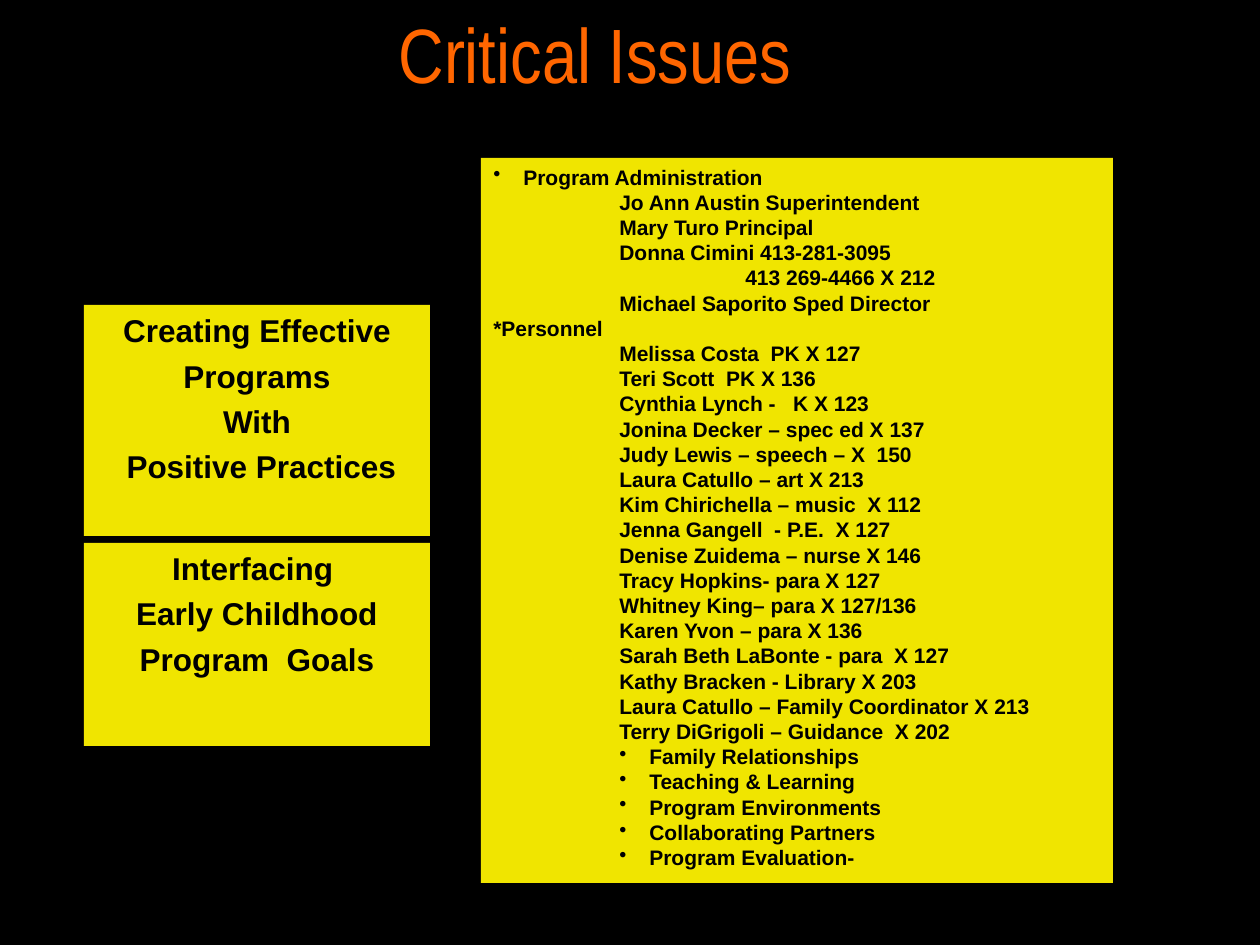
from dataclasses import dataclass

import pptx
import pptx.dml.color
import pptx.enum.shapes
import pptx.enum.text
import pptx.oxml
import pptx.oxml.ns
import pptx.util

EMU_PER_PX = 914400 / 126
INCH = 126
BULLET_GAP = 30
COLORS = {"background": "000000", "title": "FF6600", "panel": "F0E500", "text": "000000"}
ALIGN = pptx.enum.text.PP_ALIGN


@dataclass(frozen=True)
class Line:
    text: str
    indent: int = 0
    bullet: bool = False


@dataclass(frozen=True)
class Panel:
    left: int
    top: int
    width: int
    height: int
    lines: list[Line]
    size: int
    align: ALIGN = ALIGN.LEFT
    space_before: float = 0


ADMINISTRATORS = [
    "Jo Ann Austin Superintendent",
    "Mary Turo Principal",
    "Donna Cimini 413-281-3095",
]
PERSONNEL = [
    "Melissa Costa  PK X 127",
    "Teri Scott  PK X 136",
    "Cynthia Lynch -   K X 123",
    "Jonina Decker – spec ed X 137",
    "Judy Lewis – speech – X  150",
    "Laura Catullo – art X 213",
    "Kim Chirichella – music  X 112",
    "Jenna Gangell  - P.E.  X 127",
    "Denise Zuidema – nurse X 146",
    "Tracy Hopkins- para X 127",
    "Whitney King– para X 127/136",
    "Karen Yvon – para X 136",
    "Sarah Beth LaBonte - para  X 127",
    "Kathy Bracken - Library X 203",
    "Laura Catullo – Family Coordinator X 213",
    "Terry DiGrigoli – Guidance  X 202",
]
TOPICS = [
    "Family Relationships",
    "Teaching & Learning",
    "Program Environments",
    "Collaborating Partners",
    "Program Evaluation-",
]
DIRECTORY = [
    Line("Program Administration", bullet=True),
    *[Line(person, INCH) for person in ADMINISTRATORS],
    Line("413 269-4466 X 212", 2 * INCH),
    Line("Michael Saporito Sped Director", INCH),
    Line("*Personnel"),
    *[Line(person, INCH) for person in PERSONNEL],
    *[Line(topic, INCH, bullet=True) for topic in TOPICS],
]
PRACTICES = ["Creating Effective", " Programs ", "With", " Positive Practices"]
GOALS = ["Interfacing ", "Early Childhood", "Program  Goals"]

PANELS = [
    Panel(481, 158, 632, 725, DIRECTORY, 12),
    Panel(84, 305, 346, 231, [Line(text) for text in PRACTICES], 18, ALIGN.CENTER, 4.3),
    Panel(84, 543, 346, 203, [Line(text) for text in GOALS], 18, ALIGN.CENTER, 4.3),
]


def px(length: int) -> pptx.util.Emu:
    return pptx.util.Emu(round(length * EMU_PER_PX))


def rgb(role: str) -> pptx.dml.color.RGBColor:
    return pptx.dml.color.RGBColor.from_string(COLORS[role])


def set_font(paragraph, name: str, size: int, color: str, bold: bool = False) -> None:
    paragraph.font.name = name
    paragraph.font.size = pptx.util.Pt(size)
    paragraph.font.bold = bold
    paragraph.font.color.rgb = rgb(color)


def set_indent(paragraph, line: Line) -> None:
    """Set the left margin, and a hanging bullet where the line has one."""
    properties = paragraph._p.get_or_add_pPr()
    hang = BULLET_GAP if line.bullet else 0
    properties.set("marL", str(px(line.indent + hang)))
    properties.set("indent", str(-px(hang)))
    if line.bullet:
        bullet = pptx.oxml.parse_xml(
            f'<a:buChar {pptx.oxml.ns.nsdecls("a")} char="•"/>'
        )
        properties.insert_element_before(bullet, "a:tabLst", "a:defRPr", "a:extLst")


def draw_title(slide, text: str) -> None:
    box = slide.shapes.add_textbox(px(305), px(0), px(598), px(136))
    box.text_frame.word_wrap = False
    paragraph = box.text_frame.paragraphs[0]
    paragraph.text = text
    paragraph.alignment = ALIGN.CENTER
    set_font(paragraph, "Arial Narrow", 44, "title")


def draw_panel(slide, panel: Panel) -> None:
    box = slide.shapes.add_shape(
        pptx.enum.shapes.MSO_SHAPE.RECTANGLE,
        px(panel.left), px(panel.top), px(panel.width), px(panel.height),
    )
    box.shadow.inherit = False
    box.fill.solid()
    box.fill.fore_color.rgb = rgb("panel")
    box.line.fill.background()
    frame = box.text_frame
    frame.word_wrap = True
    frame.vertical_anchor = pptx.enum.text.MSO_ANCHOR.TOP
    for number, line in enumerate(panel.lines):
        paragraph = frame.add_paragraph() if number else frame.paragraphs[0]
        paragraph.text = line.text
        paragraph.alignment = panel.align
        paragraph.space_before = pptx.util.Pt(panel.space_before)
        set_font(paragraph, "Arial", panel.size, "text", bold=True)
        set_indent(paragraph, line)


def main() -> None:
    deck = pptx.Presentation()
    deck.slide_width, deck.slide_height = px(1260), px(945)
    slide = deck.slides.add_slide(deck.slide_layouts[6])
    slide.background.fill.solid()
    slide.background.fill.fore_color.rgb = rgb("background")
    draw_title(slide, "Critical Issues ")
    for panel in PANELS:
        draw_panel(slide, panel)
    deck.save("out.pptx")


if __name__ == "__main__":
    main()
